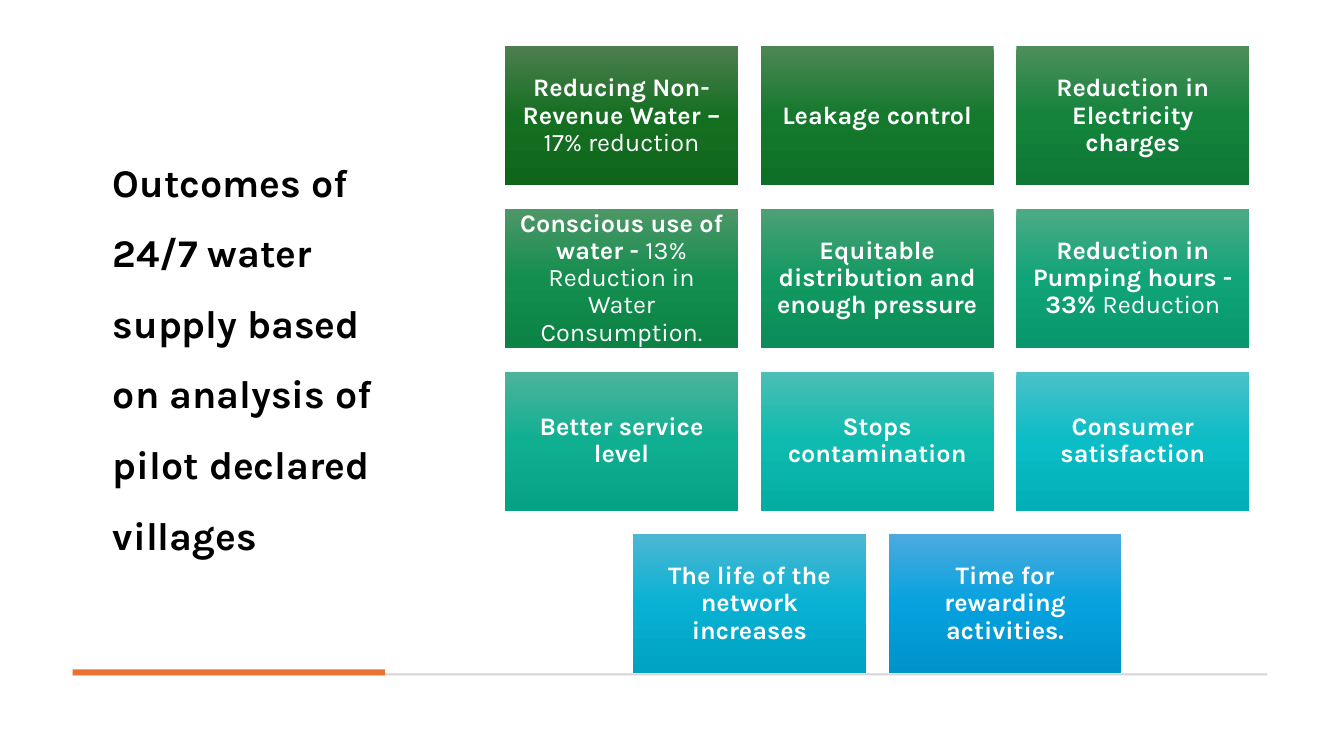
from copy import deepcopy

from pptx import Presentation
from pptx import util as u
from pptx.dml.color import RGBColor
from pptx.enum import shapes, text
from pptx.oxml.ns import qn

FONT = "Karla"
COLORS = {"title": "000000", "label": "FFFFFF", "rule": "D5D5D5", "accent": "E97132"}
TITLE = "Outcomes of 24/7 water supply based on analysis of pilot declared villages"

# Rows of (bold text, regular text, gradient from top to bottom)
OUTCOMES = [
    [
        ("Reducing Non-Revenue Water – ", "17% reduction", ("4D7E50", "156F21", "0F661B")),
        ("Leakage control", "", ("4D8655", "14792D", "0E7026")),
        ("Reduction in Electricity charges", "", ("4D8E5C", "14833C", "0D7934")),
    ],
    [
        ("Conscious use of water - ", "13% Reduction in Water Consumption.",
         ("4D9767", "138E4E", "0C8345")),
        ("Equitable distribution and enough pressure", "", ("4DA075", "129962", "0A8D58")),
        ("Reduction in Pumping hours - 33% ", "Reduction", ("4DAA86", "10A478", "08976D")),
    ],
    [
        ("Better service level", "", ("4CB49B", "0FAF92", "06A286")),
        ("Stops contamination", "", ("4CBEB4", "0DBBAF", "04ADA2")),
        ("Consumer satisfaction", "", ("4CC0C8", "0ABDC6", "02AFB8")),
    ],
    [
        ("The life of the network increases", "", ("4CB7D3", "08B1D3", "00A2C2")),
        ("Time for rewarding activities.", "", ("4CAADF", "05A2DF", "0092CB")),
    ],
]


def rgb(hex_color):
    return RGBColor.from_string(hex_color)


def add_block(slide, left, top, width, height):
    block = slide.shapes.add_shape(
        shapes.MSO_SHAPE.RECTANGLE,
        u.Inches(left), u.Inches(top), u.Inches(width), u.Inches(height))
    block.shadow.inherit = False
    block.line.fill.background()
    return block


def fill_gradient(block, hex_colors):
    """Fill from top to bottom with three evenly spaced colours."""
    block.fill.gradient()
    block.fill.gradient_angle = 270
    stop_list = block._element.spPr.find(qn("a:gradFill")).find(qn("a:gsLst"))
    stop_list.insert(1, deepcopy(stop_list[0]))
    for stop, position, hex_color in zip(block.fill.gradient_stops, (0, 0.5, 1), hex_colors):
        stop.position = position
        stop.color.rgb = rgb(hex_color)


def add_title(slide, left, top, width, height):
    title = slide.shapes.title
    title.left, title.top = u.Inches(left), u.Inches(top)
    title.width, title.height = u.Inches(width), u.Inches(height)
    frame = title.text_frame
    frame.text = TITLE
    frame.word_wrap = True
    frame.auto_size = text.MSO_AUTO_SIZE.NONE
    frame.vertical_anchor = text.MSO_ANCHOR.MIDDLE
    paragraph = frame.paragraphs[0]
    paragraph.alignment = text.PP_ALIGN.LEFT
    paragraph.line_spacing = 1.5
    paragraph.space_after = u.Pt(6)
    font = paragraph.font
    font.name, font.size, font.bold = FONT, u.Pt(28), True
    font.color.rgb = rgb(COLORS["title"])


def add_footer_rule(slide, left, top, width):
    """Draw the thin rule with the accent bar over its left end."""
    for color, bar_top, bar_width, thickness in (
            ("rule", top, width, 0.02), ("accent", top - 0.04, 3.1, 0.06)):
        bar = add_block(slide, left, bar_top, bar_width, thickness)
        bar.fill.solid()
        bar.fill.fore_color.rgb = rgb(COLORS[color])


def add_outcome(slide, outcome, left, top, width, height):
    bold_text, regular_text, gradient = outcome
    tile = add_block(slide, left, top, width, height)
    fill_gradient(tile, gradient)
    frame = tile.text_frame
    frame.word_wrap = True
    frame.vertical_anchor = text.MSO_ANCHOR.MIDDLE
    frame.margin_left = frame.margin_right = u.Inches(0.07)
    frame.margin_top = frame.margin_bottom = u.Inches(0.07)
    paragraph = frame.paragraphs[0]
    paragraph.alignment = text.PP_ALIGN.CENTER
    paragraph.line_spacing = 0.9
    font = paragraph.font
    font.name, font.size = FONT, u.Pt(18)
    font.color.rgb = rgb(COLORS["label"])
    for wording, is_bold in ((bold_text, True), (regular_text, False)):
        if wording:
            run = paragraph.add_run()
            run.text = wording
            run.font.bold = is_bold


def add_outcome_grid(slide, left, top, width, height):
    """Lay the outcomes out in equal tiles, each row centred in the box."""
    tile_width, tile_height = 2.31, 1.38
    gap_x = (width - 3 * tile_width) / 2
    gap_y = (height - len(OUTCOMES) * tile_height) / (len(OUTCOMES) - 1)
    for row, outcomes in enumerate(OUTCOMES):
        row_width = len(outcomes) * (tile_width + gap_x) - gap_x
        row_left = left + (width - row_width) / 2
        for column, outcome in enumerate(outcomes):
            add_outcome(slide, outcome,
                        row_left + column * (tile_width + gap_x),
                        top + row * (tile_height + gap_y),
                        tile_width, tile_height)


def main():
    presentation = Presentation()
    presentation.slide_width = u.Inches(13.33)
    presentation.slide_height = u.Inches(7.5)
    slide = presentation.slides.add_slide(presentation.slide_layouts[5])
    add_title(slide, 1.02, 0.45, 3.1, 5.97)
    add_footer_rule(slide, 0.72, 6.68, 11.85)
    add_outcome_grid(slide, 5.01, 0.46, 7.38, 6.22)
    presentation.save("out.pptx")


if __name__ == "__main__":
    main()
